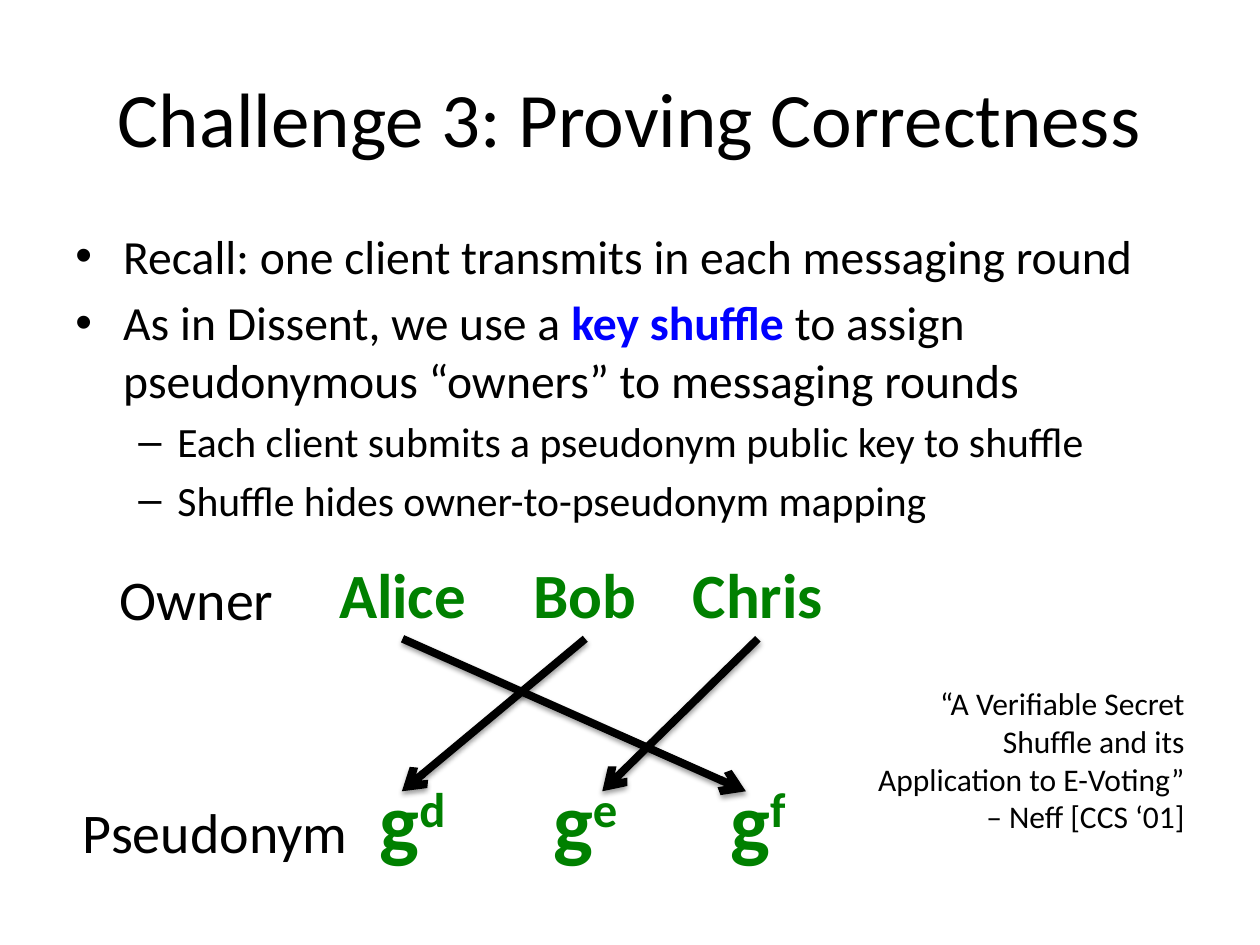
from lxml.etree import SubElement
from pptx import Presentation
from pptx.dml.color import RGBColor
from pptx.enum.shapes import MSO_CONNECTOR as Connector
from pptx.enum.text import MSO_ANCHOR as Anchor, MSO_AUTO_SIZE as AutoSize, PP_ALIGN as Align
from pptx.oxml.ns import qn
from pptx.util import Inches, Pt

COLORS = {"text": "000000", "key": "0000FF", "member": "008000"}
FONT = "Calibri"
WIDTH, HEIGHT = Inches(10), Inches(7.5)
COLUMNS, ROWS = 100, 75
MEMBER_LEFT, MEMBER_WIDTH = 25.9, 13.7
OWNER_TOP, PSEUDONYM_TOP, ARROW_END = 43.6, 60.5, 62.8
BULLETS = {0: ("•", 27.2, 0.38, 0.38), 1: ("–", 23.8, 0.81, 0.31)}
OUTLINE = [
    (0, [("Recall: one client transmits in each messaging round", {})]),
    (0, [("As in Dissent, we use a ", {}),
         ("key shuffle ", {"color": "key", "bold": True}),
         ("to assign pseudonymous “owners” to messaging rounds", {})]),
    (1, [("Each client submits a pseudonym public key to shuffle", {})]),
    (1, [("Shuffle hides owner-to-pseudonym mapping", {})]),
]
OWNERS = [("Alice", 22.7, 18.5, 59.2), ("Bob", 39.6, 13.7, 31.9), ("Chris", 53.3, 13.7, 47.8)]


def across(columns):
    """Return the length of a number of grid columns."""
    return int(WIDTH * columns / COLUMNS)


def down(rows):
    """Return the length of a number of grid rows."""
    return int(HEIGHT * rows / ROWS)


def write(paragraph, text, size=32, color="text", bold=False, raised=False):
    """Append a formatted run to a paragraph."""
    run = paragraph.add_run()
    run.text = text
    run.font.name = FONT
    run.font.size = Pt(size)
    run.font.bold = bold
    run.font.color.rgb = RGBColor.from_string(COLORS[color])
    if raised:
        run._r.get_or_add_rPr().set("baseline", "30000")


def add_box(slide, left, top, width, height, grow=True):
    """Add an empty wrapping text box placed on the grid."""
    box = slide.shapes.add_textbox(across(left), down(top), across(width), down(height))
    box.text_frame.word_wrap = True
    box.text_frame.auto_size = AutoSize.SHAPE_TO_FIT_TEXT if grow else AutoSize.NONE
    return box


def add_label(slide, text, place, align=Align.CENTER, **style):
    """Add a one-paragraph label."""
    label = add_box(slide, *place)
    paragraph = label.text_frame.paragraphs[0]
    paragraph.alignment = align
    write(paragraph, text, **style)
    return label


def add_title(slide, text):
    """Add the vertically centred heading."""
    title = add_box(slide, 5, 3, 90, 12.5, grow=False)
    title.text_frame.vertical_anchor = Anchor.MIDDLE
    title.text_frame.paragraphs[0].alignment = Align.CENTER
    write(title.text_frame.paragraphs[0], text, size=44)


def add_outline(slide, items):
    """Add the two-level bulleted outline."""
    frame = add_box(slide, 5, 17.5, 90, 25.5, grow=False).text_frame
    for index, (level, runs) in enumerate(items):
        paragraph = frame.add_paragraph() if index else frame.paragraphs[0]
        mark, size, margin, hanging = BULLETS[level]
        paragraph.level = level
        paragraph.space_before = Pt(size * 0.2)
        properties = paragraph._p.get_or_add_pPr()
        properties.set("marL", str(Inches(margin)))
        properties.set("indent", str(-Inches(hanging)))
        SubElement(properties, qn("a:buFont"), typeface="Arial")
        SubElement(properties, qn("a:buChar"), char=mark)
        for text, style in runs:
            write(paragraph, text, size=size, **style)


def add_arrow(slide, owner, end_column):
    """Add a shadowed arrow from an owner down to a pseudonym."""
    end = across(end_column), down(ARROW_END)
    arrow = slide.shapes.add_connector(Connector.STRAIGHT, owner.left, owner.top, *end)
    arrow.begin_connect(owner, 2)
    arrow.line.width = Pt(4.5)
    arrow.line.color.rgb = RGBColor.from_string(COLORS["text"])
    SubElement(arrow.line._get_or_add_ln(), qn("a:tailEnd"), type="arrow")
    effects = SubElement(arrow._element.spPr, qn("a:effectLst"))
    shadow = SubElement(effects, qn("a:outerShdw"), blurRad=str(Pt(3.1)), dist=str(Pt(1.6)),
                        dir="5400000", rotWithShape="0")
    tint = SubElement(shadow, qn("a:srgbClr"), val=COLORS["text"])
    SubElement(tint, qn("a:alpha"), val="38000")


def add_shuffle(slide):
    """Add the owners, the pseudonyms and the arrows that map them."""
    add_label(slide, "Pseudonym", (5.2, 62.8, 23.4, 6.4), Align.RIGHT)
    add_label(slide, "Owner", (-0.7, 44.3, 23.4, 6.4), Align.RIGHT)
    for name, left, width, target in OWNERS:
        owner = add_label(slide, name, (left, OWNER_TOP, width, 7.1),
                          size=36, color="member", bold=True)
        add_arrow(slide, owner, target)
    for index, exponent in enumerate("def"):
        place = (MEMBER_LEFT + index * MEMBER_WIDTH, PSEUDONYM_TOP, MEMBER_WIDTH, 9.1)
        style = {"size": 48, "color": "member", "bold": True}
        pseudonym = add_label(slide, "g", place, **style)
        write(pseudonym.text_frame.paragraphs[0], exponent, raised=True, **style)


def main():
    """Build and save the slide."""
    deck = Presentation()
    deck.slide_width, deck.slide_height = WIDTH, HEIGHT
    slide = deck.slides.add_slide(deck.slide_layouts[6])
    add_title(slide, "Challenge 3: Proving Correctness")
    add_outline(slide, OUTLINE)
    add_shuffle(slide)
    add_label(slide, "“A Veriﬁable Secret Shufﬂe and its Application to E-Voting” – Neff [CCS ‘01]",
              (68.5, 53.8, 26.5, 13.1), Align.RIGHT, size=18)
    deck.save("out.pptx")


if __name__ == "__main__":
    main()
